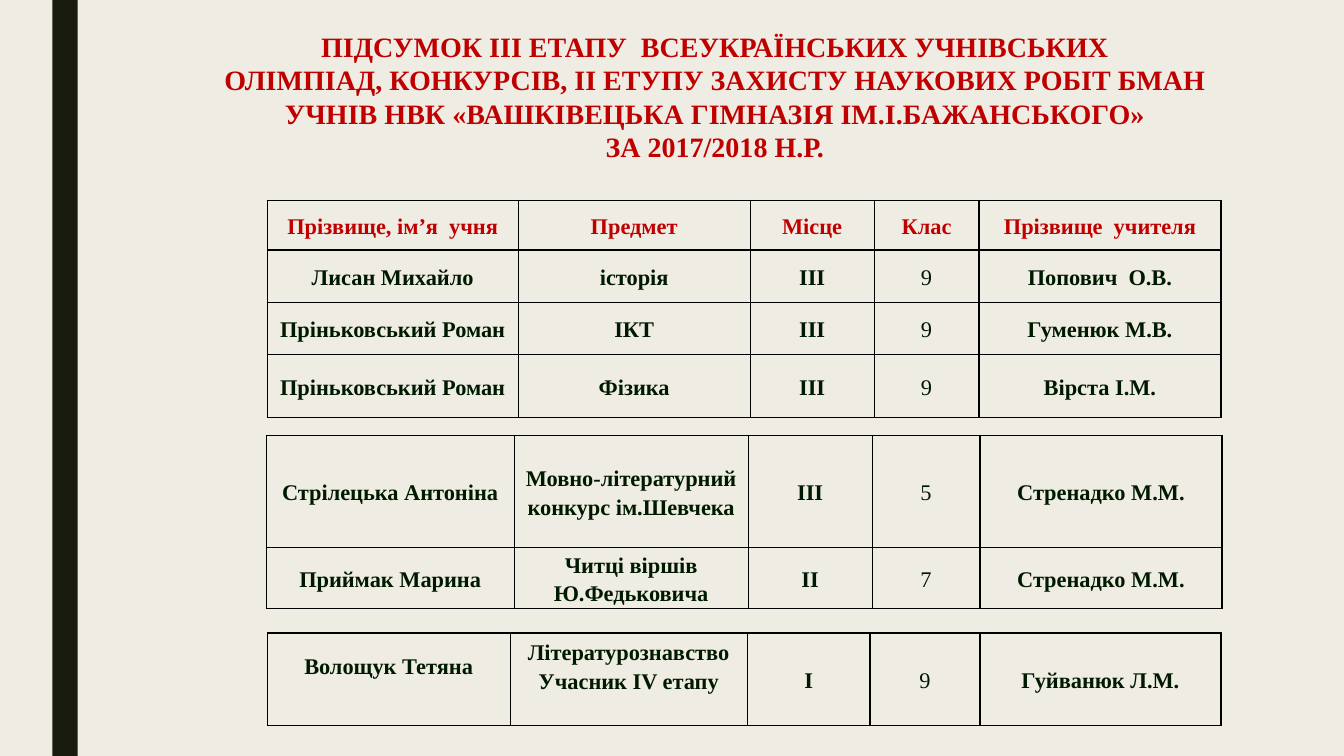
import pptx
import pptx.util
import pptx.dml.color
import pptx.enum.shapes
import pptx.enum.text
import pptx.oxml
import pptx.oxml.ns
from pptx.util import Inches, Pt
from pptx.dml.color import RGBColor

# Content
TITLE = [
    "ПІДСУМОК ІІІ ЕТАПУ  ВСЕУКРАЇНСЬКИХ УЧНІВСЬКИХ",
    "ОЛІМПІАД, КОНКУРСІВ, ІІ ЕТУПУ ЗАХИСТУ НАУКОВИХ РОБІТ БМАН",
    "УЧНІВ НВК «ВАШКІВЕЦЬКА ГІМНАЗІЯ ІМ.І.БАЖАНСЬКОГО»",
    "ЗА 2017/2018 Н.Р.",
]
HEADER = ["Прізвище, ім’я  учня", "Предмет", "Місце", "Клас", "Прізвище  учителя"]
OLYMPIADS = [
    HEADER,
    ["Лисан Михайло", "історія", "ІІІ", "9", "Попович  О.В."],
    ["Пріньковський Роман", "ІКТ", "ІІІ", "9", "Гуменюк М.В."],
    ["Пріньковський Роман", "Фізика", "ІІІ", "9", "Вірста І.М."],
]
CONTESTS = [
    ["Стрілецька Антоніна", "Мовно-літературний конкурс ім.Шевчека", "ІІІ", "5",
     "Стренадко М.М."],
    ["Приймак Марина", "Читці віршів Ю.Федьковича", "ІІ", "7", "Стренадко М.М."],
]
RESEARCH = [
    ["Волощук Тетяна", "Літературознавство\nУчасник IV етапу", "І", "9", "Гуйванюк Л.М."],
]

# Left, top, column widths, row heights (inches), rows, columns raised by one line
TABLES = [
    (2.65, 1.99, [2.49, 2.3, 1.23, 1.04, 2.4], [0.49, 0.52, 0.52, 0.62], OLYMPIADS, ()),
    (2.64, 4.32, [2.46, 2.32, 1.23, 1.07, 2.4], [1.11, 0.61], CONTESTS, ()),
    (2.65, 6.28, [2.41, 2.35, 1.22, 1.09, 2.39], [0.92], RESEARCH, (0, 1)),
]
CLASS_COLUMN = 3
LINE_HEIGHT = 0.28

FONT = "Times New Roman"
PAPER = RGBColor(0xEF, 0xED, 0xE3)
BAR = RGBColor(0x19, 0x1B, 0x0E)
RED = RGBColor(0xC0, 0x00, 0x00)
GREEN = RGBColor(0x00, 0x1A, 0x00)


def write(tf, text, size, color, bold=True, spacing=None):
    tf.text = text
    for p in tf.paragraphs:
        p.alignment = pptx.enum.text.PP_ALIGN.CENTER
        if spacing:
            p.line_spacing = spacing
        for r in p.runs:
            r.font.name, r.font.size, r.font.bold = FONT, Pt(size), bold
            r.font.color.rgb = color


def add_borders(cell):
    props = cell._tc.get_or_add_tcPr()
    for i, side in enumerate(("lnL", "lnR", "lnT", "lnB")):
        props.insert(i, pptx.oxml.parse_xml(
            f'<a:{side} {pptx.oxml.ns.nsdecls("a")} w="{Pt(1)}"><a:solidFill>'
            f'<a:srgbClr val="000000"/></a:solidFill></a:{side}>'))


def add_results(s, left, top, widths, heights, rows, raised):
    table = s.shapes.add_table(
        len(rows), len(widths), Inches(left), Inches(top),
        Inches(sum(widths)), Inches(sum(heights))).table
    table.first_row = table.horz_banding = False
    for column, width in zip(table.columns, widths):
        column.width = Inches(width)
    for i, (row, height) in enumerate(zip(rows, heights)):
        table.rows[i].height = Inches(height)
        for j, text in enumerate(row):
            cell = table.cell(i, j)
            cell.fill.background()
            add_borders(cell)
            cell.vertical_anchor = pptx.enum.text.MSO_ANCHOR.MIDDLE
            cell.margin_left = cell.margin_right = Inches(0.07)
            cell.margin_top = 0
            cell.margin_bottom = Inches(LINE_HEIGHT if j in raised else 0)
            is_header = row is HEADER
            write(cell.text_frame, text, 16, RED if is_header else GREEN,
                  is_header or j != CLASS_COLUMN, 1.15)


def main():
    prs = pptx.Presentation()
    prs.slide_width, prs.slide_height = Inches(13.33), Inches(7.5)
    s = prs.slides.add_slide(prs.slide_layouts[5])

    # Background and side bar
    s.background.fill.solid()
    s.background.fill.fore_color.rgb = PAPER
    bar = s.shapes.add_shape(pptx.enum.shapes.MSO_SHAPE.RECTANGLE,
                             Inches(0.52), 0, Inches(0.25), prs.slide_height)
    bar.shadow.inherit = False
    bar.fill.solid()
    bar.fill.fore_color.rgb = BAR
    bar.line.fill.background()

    # Title
    title = s.shapes.title
    title.left, title.top = Inches(2), Inches(0.23)
    title.width, title.height = Inches(10.18), Inches(1.45)
    title.text_frame.vertical_anchor = pptx.enum.text.MSO_ANCHOR.MIDDLE
    title.text_frame.word_wrap = True
    title.text_frame.auto_size = pptx.enum.text.MSO_AUTO_SIZE.NONE
    write(title.text_frame, "\n".join(TITLE), 20, RED)

    # Result tables
    for spec in TABLES:
        add_results(s, *spec)

    prs.save("out.pptx")


if __name__ == "__main__":
    main()
